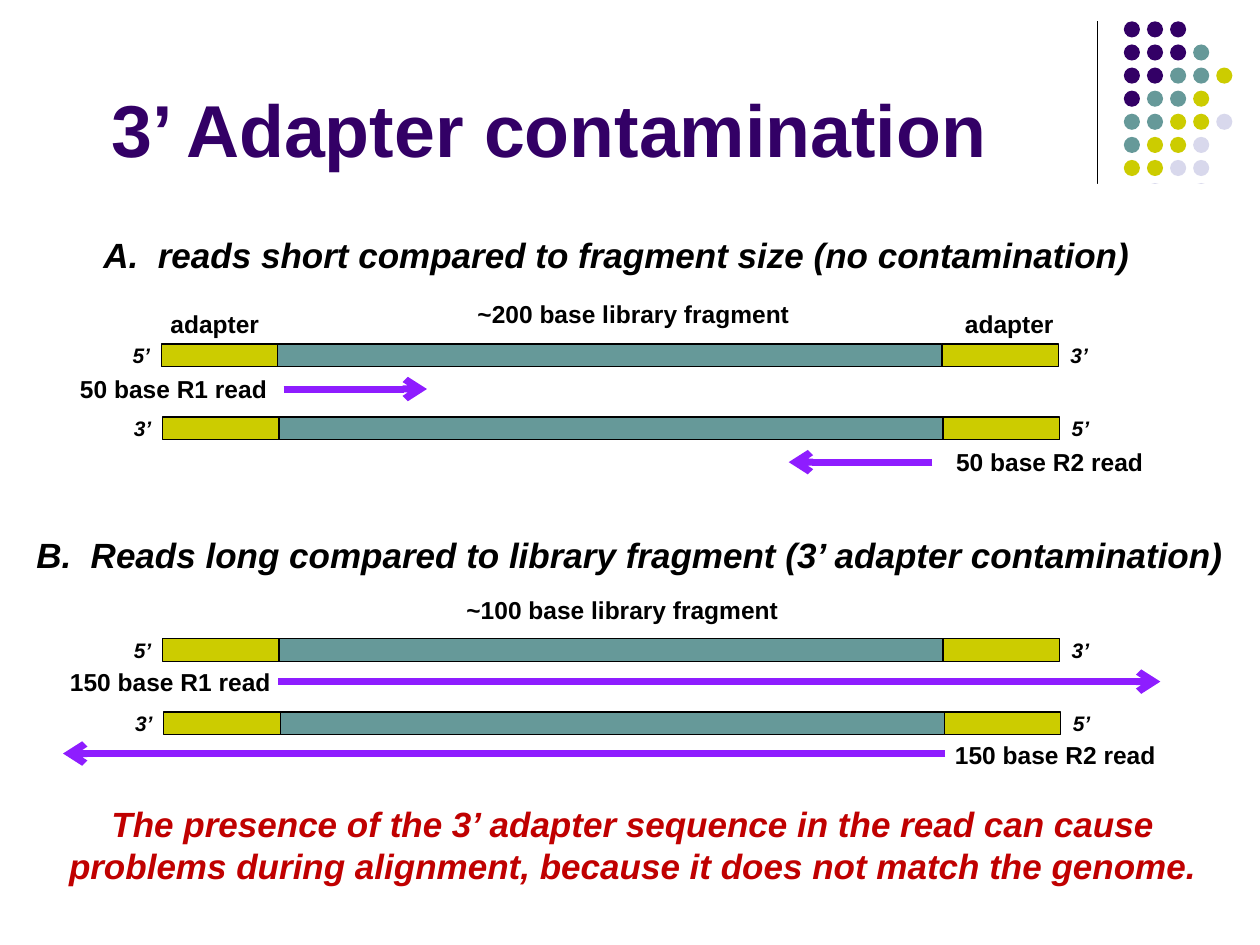
from lxml import etree
from pptx import Presentation
from pptx.dml.color import RGBColor
from pptx.enum.shapes import MSO_CONNECTOR, MSO_SHAPE
from pptx.enum.text import MSO_ANCHOR, MSO_AUTO_SIZE, PP_ALIGN
from pptx.oxml.ns import qn
from pptx.util import Pt

RECT, OVAL, LINE = MSO_SHAPE.RECTANGLE, MSO_SHAPE.OVAL, MSO_CONNECTOR.STRAIGHT
LEFT, MID, RIGHT = PP_ALIGN.LEFT, PP_ALIGN.CENTER, PP_ALIGN.RIGHT

THEME = {
    "font": "Arial",
    "ink": "000000", "paper": "FFFFFF", "title": "330066", "note": "C00000",
    "end": "CCCC00", "insert": "669999", "read": "8E1DFF", "pale": "D8D8EC",
    "sizes": {"title": 42, "head": 20, "label": 14, "prime": 12},
}

# Content; every length is in points
TITLE = "3’ Adapter contamination"
HEADS = [  # text, box, colour
    ("A.  reads short compared to fragment size (no contamination)",
     (47.5, 129.6, 610, 31.7), "ink"),
    ("B.  Reads long compared to library fragment (3’ adapter contamination)",
     (0, 301, 720, 31.7), "ink"),
    ("The presence of the 3’ adapter sequence in the read can cause problems "
     "during alignment, because it does not match the genome.",
     (23.8, 455, 676, 55.4), "note"),
]
LABELS = [  # text, box, alignment
    ("adapter", (90.3, 172.8, 81.4, 24), LEFT),
    ("adapter", (527.8, 172.8, 81.4, 24), RIGHT),
    ("~200 base library fragment", (254, 167, 216, 24), MID),
    ("50 base R1 read", (13.7, 210.2, 146, 24), RIGHT),
    ("50 base R2 read", (539.3, 252, 163, 24), LEFT),
    ("~100 base library fragment", (247.7, 336.2, 216, 24), MID),
    ("150 base R1 read", (15.8, 377.3, 146, 24), RIGHT),
    ("150 base R2 read", (538.6, 419, 163, 24), LEFT),
]
STRANDS = [  # left, top, left end, right end
    (92.2, 196.6, "5’", "3’"),
    (92.9, 238.3, "3’", "5’"),
    (92.9, 365, "5’", "3’"),
    (93.6, 406.8, "3’", "5’"),
]
PARTS = [("end", 66.6), ("insert", 379.4), ("end", 66.6)]
BAR = 13
READS = [  # start, end, height on the slide
    (162, 244, 222.3), (532.8, 450.7, 264.1),
    (159.1, 663.1, 389.5), (540, 36, 430.6),
]
DOTS = ["ttt", "ttti", "ttiie", "tiie", "iieep", "ieep", "eepp", " p p"]
DOT_KEYS = {"t": "title", "i": "insert", "e": "end", "p": "pale"}
DOT_LEFT, DOT_TOP, DOT_STEP, DOT_SIZE = 642.2, 12.2, 13.2, 9.2


def color(key):
    return RGBColor.from_string(THEME[key])


def style(frame, text, kind, key="ink", align=MID, italic=False):
    frame.word_wrap = True
    frame.auto_size = MSO_AUTO_SIZE.NONE
    frame.text = text
    para = frame.paragraphs[0]
    para.alignment = align
    font = para.runs[0].font
    font.name, font.size = THEME["font"], Pt(THEME["sizes"][kind])
    font.bold, font.italic = True, italic
    font.color.rgb = color(key)


def write(parent, text, box, kind, **looks):
    frame = parent.add_textbox(*map(Pt, box)).text_frame
    style(frame, text, kind, **looks)
    frame.vertical_anchor = MSO_ANCHOR.MIDDLE


def draw(parent, form, box, key, edge=False):
    shape = parent.add_shape(form, *map(Pt, box))
    shape.shadow.inherit = False
    shape.fill.solid()
    shape.fill.fore_color.rgb = color(key)
    if edge:
        shape.line.color.rgb = color("ink")
        shape.line.width = Pt(0.75)
    else:
        shape.line.fill.background()


def link(parent, ends, key, width, arrow=False):
    line = parent.add_connector(LINE, *map(Pt, ends))
    line.line.color.rgb = color(key)
    line.line.width = Pt(width)
    props = line._element.spPr
    if arrow:
        etree.SubElement(props.find(qn("a:ln")), qn("a:tailEnd"), type="arrow")
    etree.SubElement(props, qn("a:effectLst"))


def strand(shapes, left, top, first, last):
    group = shapes.add_group_shape().shapes
    x = left
    for key, width in PARTS:
        draw(group, RECT, (x, top, width, BAR), key, edge=True)
        x += width
    for text, spot in ((first, left - 23.5), (last, x - 0.2)):
        write(group, text, (spot, top - 5.8, 31, 24.5), "prime",
              align=LEFT, italic=True)


def main():
    deck = Presentation()
    deck.slide_width, deck.slide_height = Pt(720), Pt(540)
    slide = deck.slides.add_slide(deck.slide_layouts[5])
    shapes = slide.shapes

    # Corner ornament: rule, dot grid, and the panel that trims them
    link(shapes, (627.1, 12.2, 627.1, 131.8), "ink", 0.75)
    group = shapes.add_group_shape().shapes
    for row, marks in enumerate(DOTS):
        for col, mark in enumerate(marks):
            if mark in DOT_KEYS:
                box = (DOT_LEFT + col * DOT_STEP, DOT_TOP + row * DOT_STEP,
                       DOT_SIZE, DOT_SIZE)
                draw(group, OVAL, box, DOT_KEYS[mark])
    draw(shapes, RECT, (589.7, 105.1, 130.3, 160.6), "paper")

    # Title
    title = shapes.title
    title.left, title.top, title.width, title.height = map(
        Pt, (16.6, 41.8, 594, 60.5))
    style(title.text_frame, TITLE, "title", key="title")
    title.text_frame.vertical_anchor = MSO_ANCHOR.BOTTOM

    # Headings and labels
    for text, box, key in HEADS:
        write(shapes, text, box, "head", key=key, italic=True)
    for text, box, align in LABELS:
        write(shapes, text, box, "label", align=align)

    # Strands and reads
    for item in STRANDS:
        strand(shapes, *item)
    for start, end, y in READS:
        link(shapes, (start, y, end, y), "read", 4, arrow=True)

    deck.save("out.pptx")


if __name__ == "__main__":
    main()
